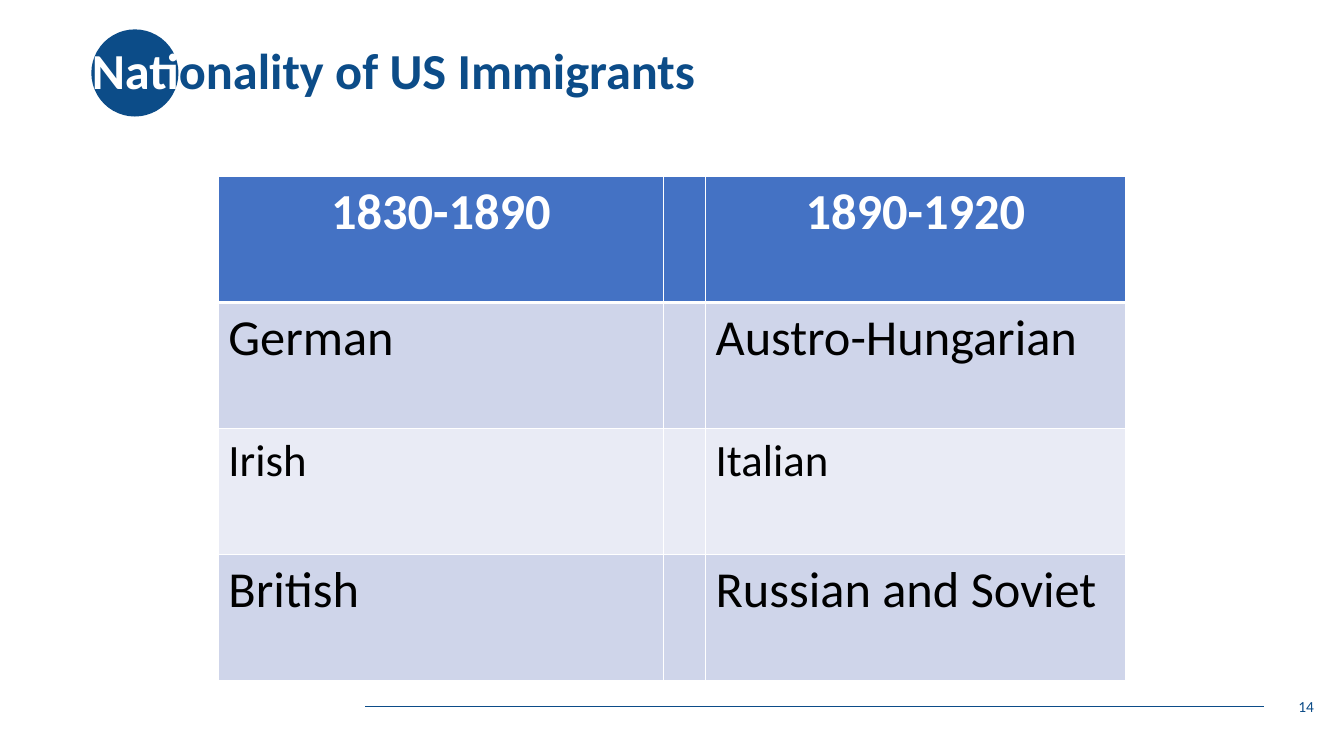
"""Builds the slide on the nationality of US immigrants."""
from dataclasses import dataclass

from lxml.etree import SubElement
from pptx import Presentation
from pptx.dml.color import RGBColor
from pptx.enum.shapes import MSO_CONNECTOR, MSO_SHAPE
from pptx.enum.text import MSO_ANCHOR, PP_ALIGN
from pptx.oxml.ns import qn
from pptx.util import Pt

EMU_PER_PX = 9525


@dataclass(frozen=True)
class Theme:
    """Colours, font and type sizes of the slide."""
    font: str = "Calibri"
    navy: str = "0C4C88"
    white: str = "FFFFFF"
    black: str = "000000"
    header: str = "4472C4"
    bands: tuple = ("CFD5EA", "E9EBF5")
    large: int = 36
    medium: int = 32
    small: int = 11


THEME = Theme()
NATIONALITIES = [
    (("1830-1890", "", "1890-1920"), THEME.large),
    (("German", "", "Austro-Hungarian"), THEME.large),
    (("Irish", "", "Italian"), THEME.medium),
    (("British", "", "Russian and Soviet"), THEME.large),
]
COLUMN_WIDTHS = (424, 40, 400)
ROW_HEIGHT = 120


def px(*lengths):
    """Turn pixel lengths into EMU."""
    return [length * EMU_PER_PX for length in lengths]


def apply_format(target, values):
    """Set each named attribute on the target."""
    for name, value in values.items():
        setattr(target, name, value)


def add_run(paragraph, text, size, color, bold=False):
    """Add one styled run to a paragraph."""
    run = paragraph.add_run()
    run.text = text
    apply_format(run.font, {"name": THEME.font, "size": Pt(size), "bold": bold})
    run.font.color.rgb = RGBColor.from_string(color)


def add_text(slide, box, runs, size, bold=False, **paragraph_format):
    """Add a vertically centred text box of coloured runs."""
    frame = slide.shapes.add_textbox(*px(*box)).text_frame
    apply_format(frame, {"word_wrap": True, "vertical_anchor": MSO_ANCHOR.MIDDLE})
    paragraph = frame.paragraphs[0]
    apply_format(paragraph, paragraph_format)
    for text, color in runs:
        add_run(paragraph, text, size, color, bold)


def add_circle(slide, left, top, diameter):
    """Add the navy circle behind the title."""
    shape = slide.shapes.add_shape(MSO_SHAPE.OVAL, *px(left, top, diameter, diameter))
    shape.shadow.inherit = False
    shape.fill.solid()
    shape.fill.fore_color.rgb = RGBColor.from_string(THEME.navy)
    shape.line.fill.background()


def add_rule(slide, left, right, y):
    """Add the thin horizontal footer rule."""
    rule = slide.shapes.add_connector(MSO_CONNECTOR.STRAIGHT, *px(left, y, right, y))
    rule.line.width = Pt(0.5)
    rule.line.color.rgb = RGBColor.from_string(THEME.navy)
    SubElement(rule.element.spPr, qn("a:effectLst"))


def set_borders(cell, widths):
    """Draw white cell borders with the given point widths by side."""
    properties = cell._tc.get_or_add_tcPr()
    for side in "LRTB":
        line = SubElement(properties, qn(f"a:ln{side}"), w=str(Pt(widths.get(side, 1))))
        fill = SubElement(line, qn("a:solidFill"))
        SubElement(fill, qn("a:srgbClr"), val=THEME.white)


def fill_cell(cell, text, size, row_index):
    """Style one table cell as header or banded body."""
    is_header = row_index == 0
    set_borders(cell, {0: {"B": 3}, 1: {"T": 3}}.get(row_index, {}))
    fill = THEME.header if is_header else THEME.bands[(row_index - 1) % 2]
    cell.fill.solid()
    cell.fill.fore_color.rgb = RGBColor.from_string(fill)
    if text:
        paragraph = cell.text_frame.paragraphs[0]
        paragraph.alignment = PP_ALIGN.CENTER if is_header else PP_ALIGN.LEFT
        add_run(paragraph, text, size, THEME.white if is_header else THEME.black, is_header)


def add_nationality_table(slide, left, top):
    """Add the table comparing the two immigration periods."""
    height = ROW_HEIGHT * len(NATIONALITIES)
    table = slide.shapes.add_table(
        len(NATIONALITIES), len(COLUMN_WIDTHS), *px(left, top, sum(COLUMN_WIDTHS), height)
    ).table
    for column, width in zip(table.columns, px(*COLUMN_WIDTHS)):
        column.width = width
    for row_index, (texts, size) in enumerate(NATIONALITIES):
        for column_index, text in enumerate(texts):
            fill_cell(table.cell(row_index, column_index), text, size, row_index)


def main():
    """Build and save the slide."""
    presentation = Presentation()
    width, height = px(1280, 720)
    apply_format(presentation, {"slide_width": width, "slide_height": height})
    slide = presentation.slides.add_slide(presentation.slide_layouts[6])
    add_rule(slide, 348, 1204, 673)
    add_circle(slide, 87, 28, 83)
    title = [("Nati", THEME.white), ("onality of US Immigrants", THEME.navy)]
    add_text(slide, (78, 0, 1104, 139), title, THEME.large, bold=True, line_spacing=0.9)
    add_nationality_table(slide, 208, 168)
    add_text(slide, (973, 654, 288, 38), [("14", THEME.navy)], THEME.small,
             alignment=PP_ALIGN.RIGHT)
    presentation.save("out.pptx")


if __name__ == "__main__":
    main()
